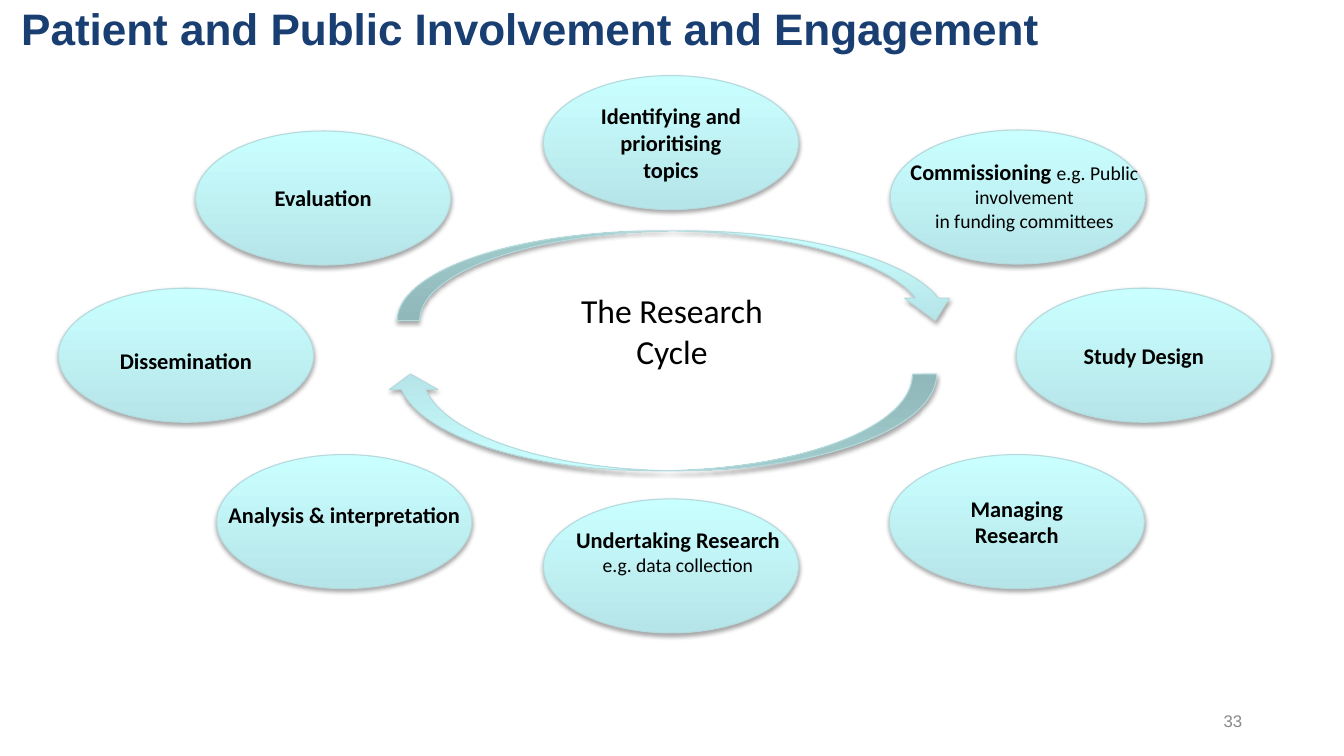
from lxml import etree
from pptx import Presentation
from pptx.dml.color import RGBColor
from pptx.enum.shapes import MSO_SHAPE
from pptx.enum.text import MSO_ANCHOR, PP_ALIGN
from pptx.oxml.ns import qn
from pptx.util import Inches, Pt

OVAL, ARROW = MSO_SHAPE.OVAL, MSO_SHAPE.CURVED_DOWN_ARROW
TOP, MIDDLE = MSO_ANCHOR.TOP, MSO_ANCHOR.MIDDLE
LEFT, CENTER, RIGHT = PP_ALIGN.LEFT, PP_ALIGN.CENTER, PP_ALIGN.RIGHT
COLORS = {"title": "193E72", "text": "000000", "number": "888888", "line": "B5DADD",
          "bottom": "B5E5E9", "top": "CAFFFF", "shadow": "000000"}
OVAL_WIDTH, OVAL_HEIGHT = 2.53, 1.33

presentation = Presentation()
presentation.slide_width = Inches(13.33)
presentation.slide_height = Inches(7.5)
slide = presentation.slides.add_slide(presentation.slide_layouts[5])


def add_cycle_shape(kind, left, top, width, height):
    """Add a shape with the pale gradient, thin outline and soft shadow."""
    shape = slide.shapes.add_shape(kind, Inches(left), Inches(top), Inches(width), Inches(height))
    shape.fill.gradient()
    shape.fill.gradient_angle = 90
    for stop, name in zip(shape.fill.gradient_stops, ("bottom", "top")):
        stop.color.rgb = RGBColor.from_string(COLORS[name])
    shape.line.color.rgb = RGBColor.from_string(COLORS["line"])
    shape.line.width = Pt(0.75)
    shape.shadow.inherit = False
    effects = shape._element.spPr.find(qn("a:effectLst"))
    shadow = etree.SubElement(effects, qn("a:outerShdw"), blurRad=str(Pt(3.1)), dist=str(Pt(1.8)),
                              dir="5400000", rotWithShape="0")
    color = etree.SubElement(shadow, qn("a:srgbClr"), val=COLORS["shadow"])
    etree.SubElement(color, qn("a:alpha"), val="35000")
    return shape


def write_text(shape, lines, align=CENTER, anchor=MIDDLE, font="Calibri", color="text", inset=0.1):
    """Write lines, each a list of (text, size, bold) runs."""
    frame = shape.text_frame
    frame.word_wrap = True
    frame.vertical_anchor = anchor
    frame.margin_left = frame.margin_right = Inches(inset)
    frame.margin_top = frame.margin_bottom = Inches(0.05)
    for index, runs in enumerate(lines):
        paragraph = frame.paragraphs[0] if index == 0 else frame.add_paragraph()
        paragraph.alignment = align
        for text, size, bold in runs:
            run = paragraph.add_run()
            run.text = text
            run.font.name = font
            run.font.size = Pt(size)
            run.font.bold = bold
            run.font.color.rgb = RGBColor.from_string(COLORS[color])


# Title
title = slide.shapes.title
title.left, title.top, title.width, title.height = (Inches(n) for n in (0.14, 0.06, 11.12, 0.5))
write_text(title, [[("Patient and Public Involvement and Engagement", 31.5, True)]],
           align=LEFT, font="Arial", color="title", inset=0.07)
title.text_frame.paragraphs[0].line_spacing = 0.9

# Stages of the cycle, clockwise from the top; some are labelled by a separate text box
stages = [
    (5.39, 0.75, "Identifying and prioritising topics"),
    (8.83, 1.29, None),
    (10.08, 2.86, "Study Design"),
    (8.82, 4.51, "Managing Research"),
    (5.39, 4.95, None),
    (2.15, 4.51, None),
    (0.58, 2.86, None),
    (1.94, 1.3, "Evaluation"),
]
for left, top, label in stages:
    oval = add_cycle_shape(OVAL, left, top, OVAL_WIDTH, OVAL_HEIGHT)
    if label:
        write_text(oval, [[(label, 16, True)]], inset=0.12)

# Text boxes over the ovals and in the centre
labels = [
    (5.4, 2.83, 2.53, 0.91, [[("The Research Cycle", 24, False)]]),
    (8.82, 1.52, 2.68, 0.84, [[("Commissioning ", 16, True), ("e.g. Public involvement", 14, False)],
                              [("in funding committees", 14, False)]]),
    (5.46, 5.17, 2.53, 0.61, [[("Undertaking Research", 16, True)],
                              [("e.g. data collection", 14, False)]]),
    (2.15, 4.92, 2.53, 0.37, [[("Analysis & interpretation", 16, True)]]),
    (0.58, 3.39, 2.53, 0.37, [[("Dissemination", 16, True)]]),
]
for *box, lines in labels:
    write_text(slide.shapes.add_textbox(*(Inches(n) for n in box)), lines, anchor=TOP)

# Curved arrows
arrows = [
    (3.94, 2.29, 5.56, 0.89, 0, 0.25),
    (3.83, 3.71, 5.46, 0.96, 180, 0.16),
]
for left, top, width, height, rotation, head in arrows:
    arrow = add_cycle_shape(ARROW, left, top, width, height)
    arrow.rotation = rotation
    arrow.adjustments[2] = head

# Slide number
number = slide.shapes.add_textbox(Inches(9.42), Inches(6.95), Inches(3), Inches(0.4))
write_text(number, [[("33", 12, False)]], align=RIGHT, font="Arial", color="number")

presentation.save("out.pptx")
